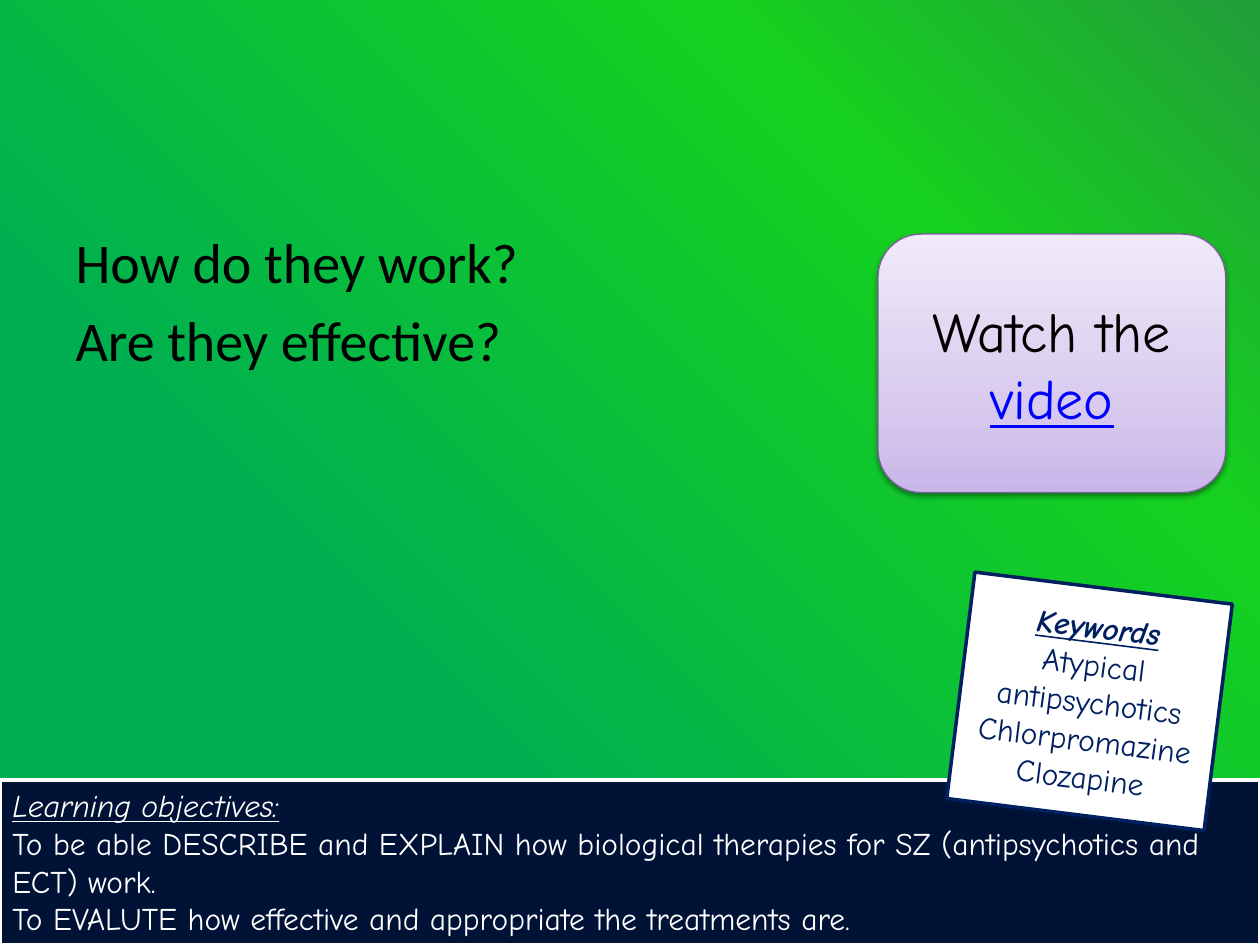
from pptx import Presentation
from pptx.dml.color import RGBColor
from pptx.enum.shapes import MSO_SHAPE as Preset
from pptx.enum.text import MSO_ANCHOR as Anchor, MSO_AUTO_SIZE as AutoSize, PP_ALIGN as Align
from pptx.oxml import parse_xml
from pptx.oxml.ns import nsdecls, qn
from pptx.util import Cm, Pt

NAVY, WHITE, BLACK = "002060", "FFFFFF", "000000"
HAND = "Comic Neue"
HEADING = {"italic": True, "underline": True}


def colour(hex_value):
    return RGBColor.from_string(hex_value)


def paint_gradient(fill, owner, stops, angle):
    """Give fill, held by the XML element owner, (percent, colour) stops."""
    fill.gradient()
    fill.gradient_angle = angle
    stop_list = next(owner.iter(qn("a:gsLst")))
    for old_stop in list(stop_list):
        stop_list.remove(old_stop)
    for percent, hex_value in stops:
        stop_list.append(parse_xml(
            f'<a:gs {nsdecls("a")} pos="{percent * 1000}">'
            f'<a:srgbClr val="{hex_value}"/></a:gs>'))


def add_soft_shadow(shape):
    effects = shape._element.spPr.find(qn("a:effectLst"))
    effects.append(parse_xml(
        f'<a:outerShdw {nsdecls("a")} blurRad="{Pt(3.1)}" dist="{Pt(1.6)}" '
        'dir="5400000" rotWithShape="0"><a:srgbClr val="000000">'
        '<a:alpha val="38000"/></a:srgbClr></a:outerShdw>'))


def add_panel(slide, preset, box, outline, width, fill=None):
    panel = slide.shapes.add_shape(preset, *map(Cm, box))
    panel.shadow.inherit = False
    panel.line.color.rgb = colour(outline)
    panel.line.width = Pt(width)
    if fill:
        panel.fill.solid()
        panel.fill.fore_color.rgb = colour(fill)
    return panel


def write(frame, paragraphs, size, ink, face=HAND, align=Align.LEFT, anchor=Anchor.TOP):
    """Fill frame with paragraphs, each a list of (text, font values) runs."""
    frame.word_wrap = True
    frame.vertical_anchor = anchor
    for index, runs in enumerate(paragraphs):
        paragraph = frame.add_paragraph() if index else frame.paragraphs[0]
        paragraph.alignment = align
        for text, extra in runs:
            run = paragraph.add_run()
            run.text = text
            run.font.color.rgb = colour(extra.get("ink", ink))
            values = {"name": face, "size": Pt(size), **extra}
            values.pop("ink", None)
            for key, value in values.items():
                setattr(run.font, key, value)


def add_questions(slide):
    questions = slide.placeholders[1]
    questions.left, questions.top, questions.width, questions.height = map(
        Cm, (1.27, 4.45, 22.86, 12.57))
    write(questions.text_frame,
          [[("How do they work?", {})], [("Are they effective?", {})]],
          32, BLACK, "Calibri")
    for index, paragraph in enumerate(questions.text_frame.paragraphs):
        properties = paragraph._p.get_or_add_pPr()
        properties.set("marL", "0")
        properties.set("indent", "0")
        properties.append(parse_xml(f'<a:buNone {nsdecls("a")}/>'))
        paragraph.space_before = Pt(6.4 if index else 0)


def add_video_prompt(slide):
    prompt = add_panel(slide, Preset.ROUNDED_RECTANGLE, (17.7, 4.72, 7.01, 5.21),
                       "7D60A0", 0.75)
    paint_gradient(prompt.fill, prompt._element.spPr,
                   [(0, "C9B5E8"), (35, "D8CBEE"), (100, "F0EAF9")], 90)
    add_soft_shadow(prompt)
    write(prompt.text_frame,
          [[("Watch the ", {}), ("video", {"ink": "0000FF", "underline": True})]],
          32, BLACK, align=Align.CENTER, anchor=Anchor.MIDDLE)


def add_objectives(slide):
    objectives = add_panel(slide, Preset.RECTANGLE, (0, 15.72, 25.4, 3.33),
                           WHITE, 2, "001236")
    write(objectives.text_frame, [
        [("Learning objectives:", HEADING)],
        [("To be able DESCRIBE and EXPLAIN how biological therapies for SZ "
          "(antipsychotics and ECT) work.", {})],
        [("To EVALUTE how effective and appropriate the treatments are.", {})],
    ], 18, WHITE)
    objectives.text_frame.auto_size = AutoSize.SHAPE_TO_FIT_TEXT


def add_keywords(slide):
    card = add_panel(slide, Preset.RECTANGLE, (19.35, 11.84, 5.23, 4.6), NAVY, 2, WHITE)
    card.rotation = 7.1
    keywords = ["Atypical antipsychotics", "Chlorpromazine", "Clozapine"]
    write(card.text_frame,
          [[("Keywords", {"bold": True, **HEADING})]] + [[(word, {})] for word in keywords],
          18, NAVY, align=Align.CENTER, anchor=Anchor.MIDDLE)


def main():
    deck = Presentation()
    deck.slide_width, deck.slide_height = Cm(25.4), Cm(19.05)
    slide = deck.slides.add_slide(deck.slide_layouts[1])
    unused_title = slide.shapes.title._element
    unused_title.getparent().remove(unused_title)
    paint_gradient(slide.background.fill, slide.element,
                   [(0, "00B050"), (31, "00B050"), (75, "15D11E"), (100, "229E3A")], 45)
    add_questions(slide)
    add_video_prompt(slide)
    add_objectives(slide)
    add_keywords(slide)
    deck.save("out.pptx")


if __name__ == "__main__":
    main()
